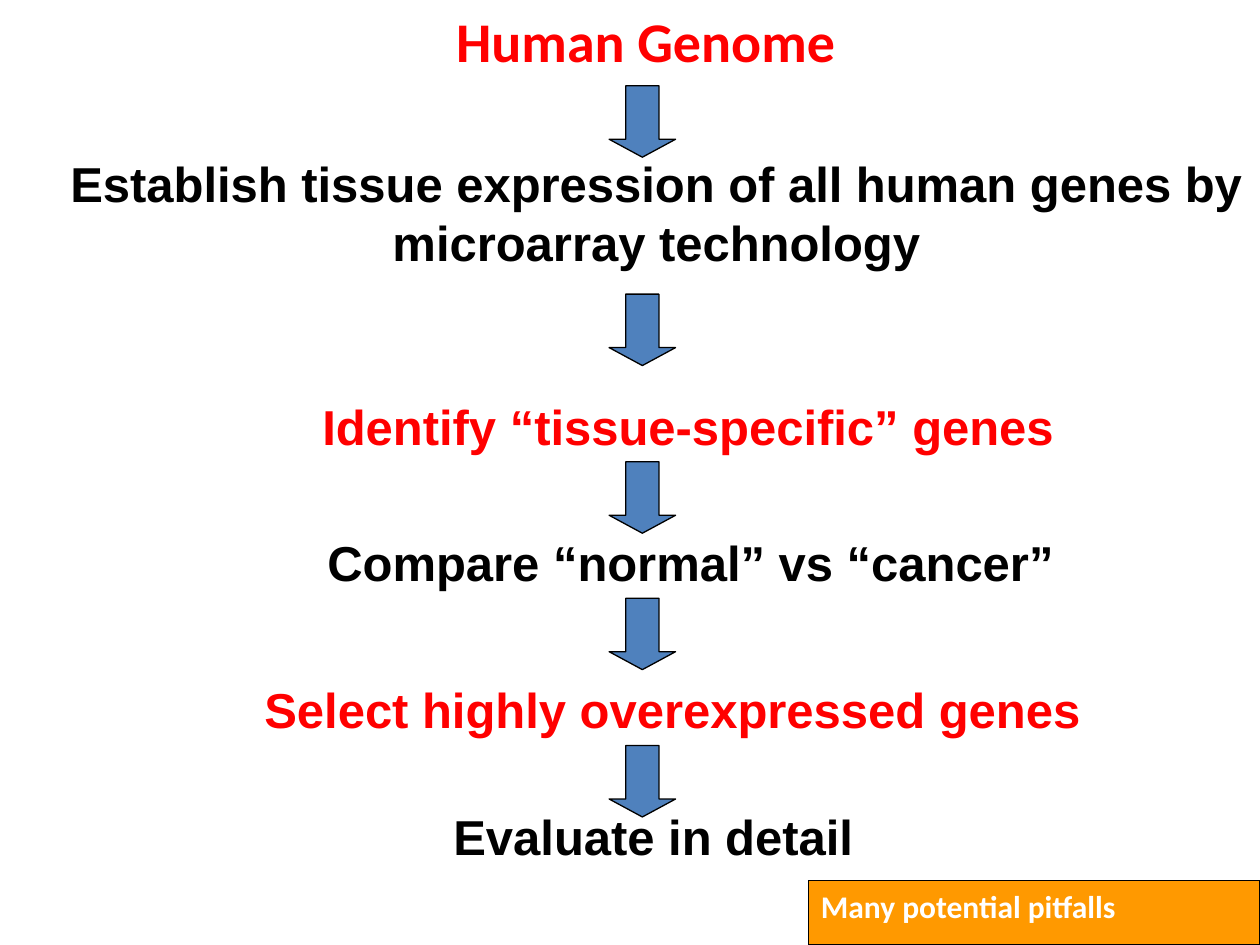
import pptx
import pptx.dml.color
import pptx.enum.shapes
import pptx.enum.text
import pptx.util

Cm = pptx.util.Cm
SHAPE = pptx.enum.shapes.MSO_SHAPE
ALIGN = pptx.enum.text.PP_ALIGN

COLOURS = {
    "red": "FF0000",
    "black": "000000",
    "white": "FFFFFF",
    "blue": "4F81BD",
    "orange": "FF9900",
}
STEP_FONT = {"name": "Arial", "size": pptx.util.Pt(28), "bold": True}
TITLE_FONT = {"name": "Calibri", "size": pptx.util.Pt(32), "bold": True}
NOTE_FONT = {"name": "Calibri", "size": pptx.util.Pt(18), "bold": True}

# Text, left, top, width, height in cm, colour, alignment
STEPS = [
    ("Establish tissue expression of all human genes by microarray technology",
     0, 2.97, 26.46, 2.62, "black", ALIGN.CENTER),
    ("Identify “tissue-specific” genes",
     5.93, 7.87, 15.88, 1.44, "red", ALIGN.CENTER),
    ("Compare “normal” vs “cancer”",
     6.35, 10.62, 15.45, 1.44, "black", ALIGN.LEFT),
    ("Select highly overexpressed genes",
     5.08, 13.58, 17.57, 1.44, "red", ALIGN.LEFT),
    ("Evaluate in detail",
     8.89, 16.13, 12.27, 1.44, "black", ALIGN.LEFT),
]
ARROW_TOPS = [1.73, 5.93, 9.31, 12.06, 15.03]


def colour(name):
    return pptx.dml.color.RGBColor.from_string(COLOURS[name])


def add_label(page, text, left, top, width, height, ink, align, font):
    """Add a text box with one formatted paragraph."""
    box = page.shapes.add_textbox(Cm(left), Cm(top), Cm(width), Cm(height))
    box.text_frame.word_wrap = True
    para = box.text_frame.paragraphs[0]
    para.alignment = align
    span = para.add_run()
    span.text = text
    for key, value in font.items():
        setattr(span.font, key, value)
    span.font.color.rgb = colour(ink)
    return box


def paint(shape, fill):
    """Give a shape a solid fill and a thin black outline."""
    shape.fill.solid()
    shape.fill.fore_color.rgb = colour(fill)
    shape.line.color.rgb = colour("black")
    shape.line.width = pptx.util.Pt(0.75)


def add_arrow(page, top):
    """Add a down arrow on the common axis of the flow."""
    arrow = page.shapes.add_shape(
        SHAPE.DOWN_ARROW, Cm(12.28), Cm(top), Cm(1.34), Cm(1.44))
    arrow.shadow.inherit = False
    arrow.adjustments[0] = 0.5
    arrow.adjustments[1] = 0.27
    paint(arrow, "blue")


def main():
    deck = pptx.Presentation()
    deck.slide_width, deck.slide_height = Cm(25.4), Cm(19.05)
    page = deck.slides.add_slide(deck.slide_layouts[6])

    # Pitfalls note in the corner
    note = add_label(page, "Many potential pitfalls", 16.3, 17.75, 9.1, 1.3,
                     "white", ALIGN.LEFT, NOTE_FONT)
    paint(note, "orange")

    # Starting point and the steps that follow
    add_label(page, "Human Genome", 7.62, 0, 10.8, 1.6,
              "red", ALIGN.CENTER, TITLE_FONT)
    for step in STEPS:
        add_label(page, *step, STEP_FONT)

    # Arrows between the steps
    for top in ARROW_TOPS:
        add_arrow(page, top)

    deck.save("out.pptx")


if __name__ == "__main__":
    main()
